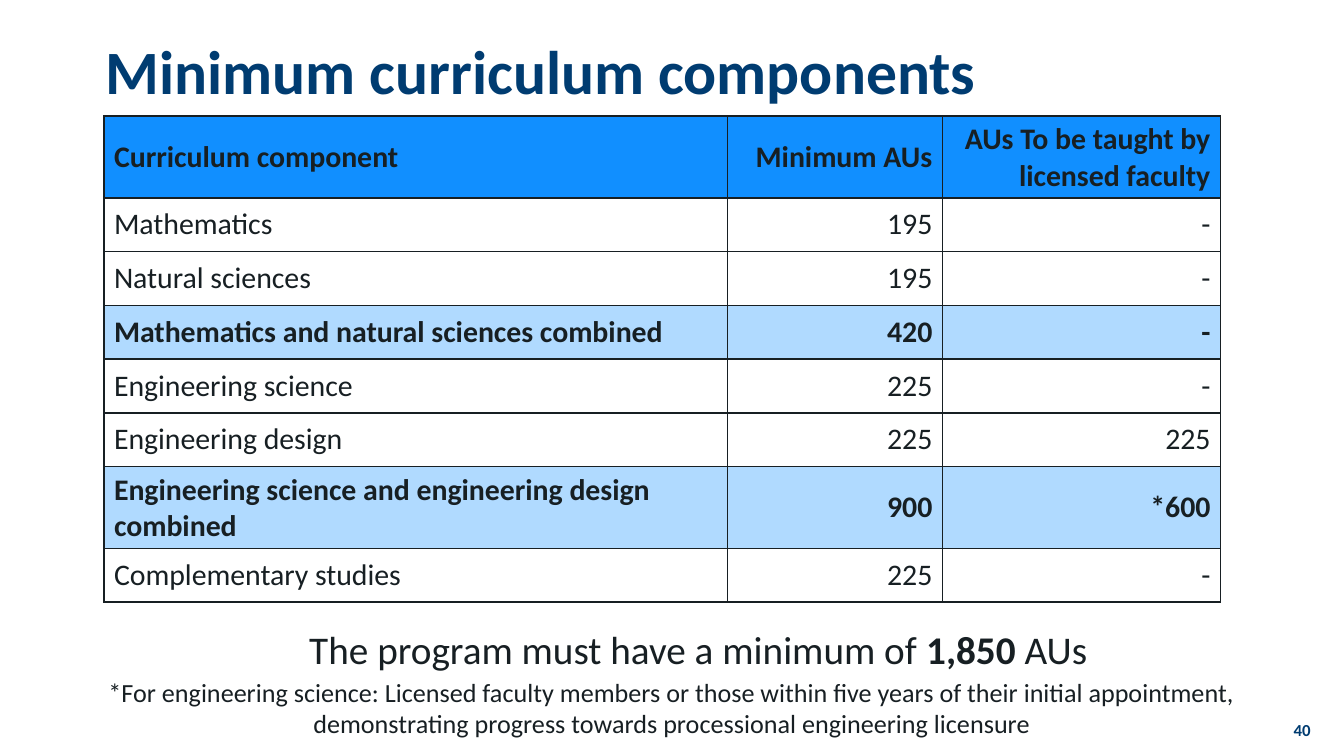
"""Build the slide on minimum curriculum components."""
from lxml.etree import SubElement
from pptx import Presentation
from pptx.dml.color import RGBColor
from pptx.enum.text import MSO_ANCHOR, MSO_AUTO_SIZE, PP_ALIGN
from pptx.oxml.ns import qn
from pptx.util import Pt

COLORS = {"navy": "003C71", "ink": "171F23", "header": "118FFF", "subtotal": "B0DAFF"}
ROWS = [
    ("Curriculum component", "Minimum AUs", "AUs To be taught by licensed faculty"),
    ("Mathematics", "195", "-"),
    ("Natural sciences", "195", "-"),
    ("Mathematics and natural sciences combined", "420", "-"),
    ("Engineering science", "225", "-"),
    ("Engineering design", "225", "225"),
    ("Engineering science and engineering design combined", "900", "*600"),
    ("Complementary studies", "225", "-"),
]
ROW_FILLS = {0: "header", 3: "subtotal", 6: "subtotal"}
COLUMN_WIDTHS = [334, 115.2, 149]
ROW_HEIGHT = 28.8


def add_span(para, text, size, color="ink", bold=False):
    span = para.add_run()
    span.text = text
    span.font.name = "Calibri"
    span.font.size = Pt(size)
    span.font.bold = bold
    span.font.color.rgb = RGBColor.from_string(COLORS[color])


def add_box(left, top, width, height, align):
    frame = page.shapes.add_textbox(Pt(left), Pt(top), Pt(width), Pt(height)).text_frame
    frame.word_wrap = True
    frame.paragraphs[0].alignment = align
    return frame


deck = Presentation()
deck.slide_width, deck.slide_height = Pt(720), Pt(405)
page = deck.slides.add_slide(deck.slide_layouts[5])

title = page.shapes.title
title.left, title.top, title.width, title.height = Pt(49.5), Pt(0.7), Pt(621), Pt(78.3)
title.text_frame.auto_size = MSO_AUTO_SIZE.NONE
title.text_frame.vertical_anchor = MSO_ANCHOR.MIDDLE
para = title.text_frame.paragraphs[0]
para.alignment = PP_ALIGN.LEFT
para.line_spacing = 0.9
add_span(para, "Minimum curriculum components", 33, "navy", True)

page_number = add_box(683.3, 385.2, 25.9, 11.5, PP_ALIGN.RIGHT)
page_number.vertical_anchor = MSO_ANCHOR.MIDDLE
add_span(page_number.paragraphs[0], "40", 9, "navy", True)

table = page.shapes.add_table(
    len(ROWS), len(COLUMN_WIDTHS), Pt(55.7), Pt(62.2),
    Pt(sum(COLUMN_WIDTHS)), Pt(ROW_HEIGHT * len(ROWS)),
).table
for column, width in zip(table.columns, COLUMN_WIDTHS):
    column.width = Pt(width)
for row_index, values in enumerate(ROWS):
    table.rows[row_index].height = Pt(ROW_HEIGHT)
    for column_index, value in enumerate(values):
        cell = table.cell(row_index, column_index)
        cell.vertical_anchor = MSO_ANCHOR.MIDDLE
        cell.margin_left = cell.margin_right = Pt(5.4)
        cell.margin_top = cell.margin_bottom = Pt(2.7)
        properties = cell._tc.get_or_add_tcPr()
        for side in ("lnL", "lnR", "lnT", "lnB"):
            border = SubElement(properties, qn(f"a:{side}"), w=str(Pt(1)))
            solid = SubElement(border, qn("a:solidFill"))
            SubElement(solid, qn("a:srgbClr"), val=COLORS["ink"])
        if row_index in ROW_FILLS:
            cell.fill.solid()
            cell.fill.fore_color.rgb = RGBColor.from_string(COLORS[ROW_FILLS[row_index]])
        else:
            cell.fill.background()
        para = cell.text_frame.paragraphs[0]
        para.alignment = PP_ALIGN.RIGHT if column_index else PP_ALIGN.LEFT
        add_span(para, value, 16, bold=row_index in ROW_FILLS)

total = add_box(125.3, 329, 497.5, 37.4, PP_ALIGN.CENTER)
total.margin_left = total.margin_right = Pt(5.4)
total.margin_top = total.margin_bottom = Pt(2.7)
para = total.paragraphs[0]
para.line_spacing = 1.14
for text, bold in [("The program must have a minimum of ", False), ("1,850", True), (" AUs", False)]:
    add_span(para, text, 21, bold=bold)

footnote = add_box(36.7, 358.6, 646.6, 41, PP_ALIGN.CENTER)
footnote.auto_size = MSO_AUTO_SIZE.SHAPE_TO_FIT_TEXT
add_span(
    footnote.paragraphs[0],
    "*For engineering science: Licensed faculty members or those within five years of their "
    "initial appointment, demonstrating progress towards processional engineering licensure",
    14,
)

deck.save("out.pptx")
